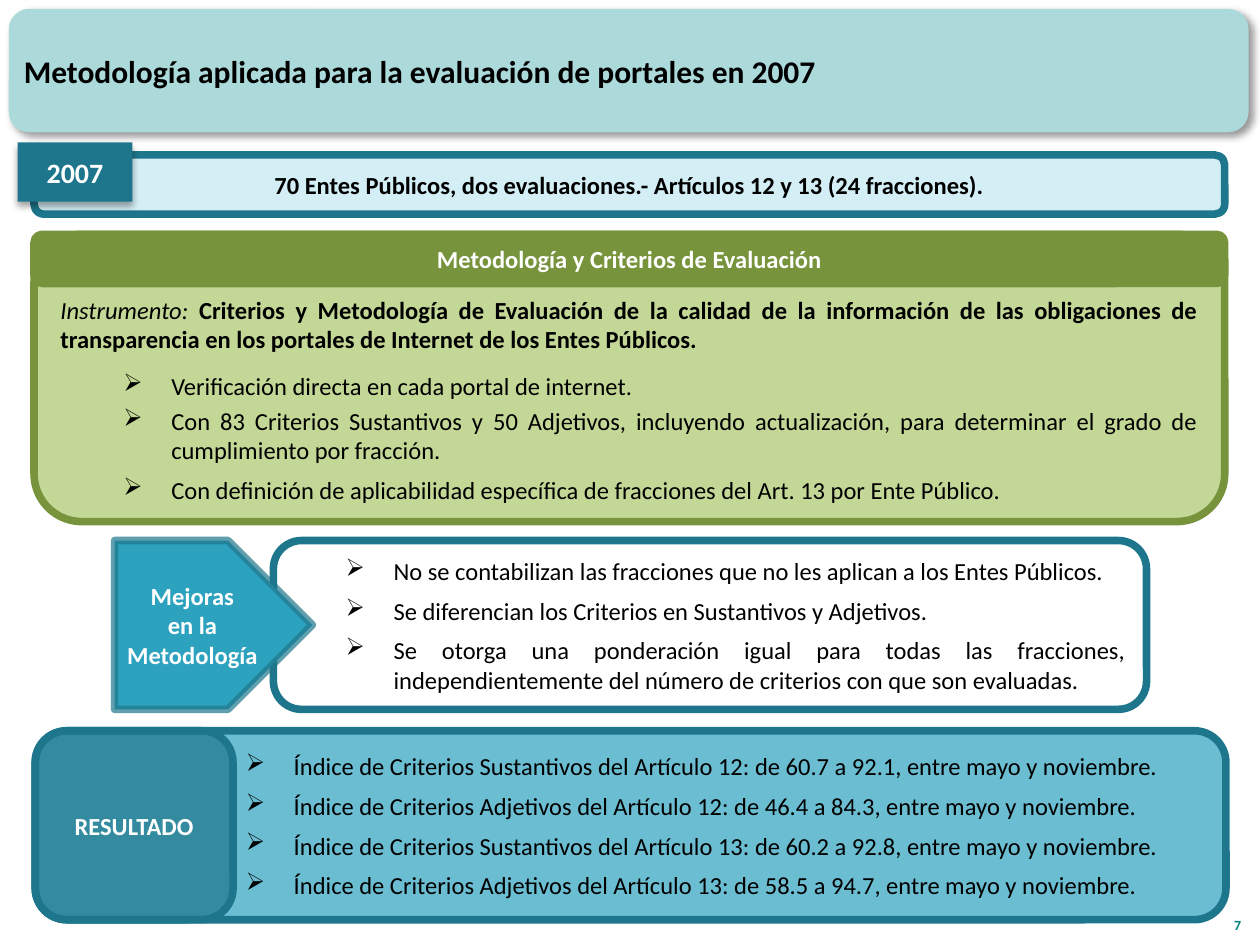
from pptx import Presentation
from pptx.dml.color import RGBColor
from pptx.enum.shapes import MSO_SHAPE as SHAPE
from pptx.enum.text import MSO_ANCHOR as ANCHOR, PP_ALIGN as ALIGN
from pptx.oxml.ns import qn
from pptx.util import Inches, Pt
from lxml.etree import SubElement

# Content
TITLE = "Metodología aplicada para la evaluación de portales en 2007"
YEAR = "2007"
SCOPE = "70 Entes Públicos, dos evaluaciones.- Artículos 12 y 13 (24 fracciones)."
METHOD = "Metodología y Criterios de Evaluación"
INSTRUMENT = [
    ("Instrumento: ", {"italic": True}),
    ("Criterios y Metodología de Evaluación de la calidad de la información de las "
     "obligaciones de transparencia en los portales de Internet de los Entes Públicos.",
     {"bold": True}),
]
CRITERIA = [
    "Verificación directa en cada portal de internet.",
    "Con 83 Criterios Sustantivos y 50 Adjetivos, incluyendo actualización, "
    "para determinar el grado de cumplimiento por fracción.",
    "Con definición de aplicabilidad específica de fracciones del Art. 13 por Ente Público.",
]
IMPROVED = ["Mejoras", "en la Metodología"]
IMPROVEMENTS = [
    "No se contabilizan las fracciones que no les aplican a los Entes Públicos.",
    "Se diferencian los Criterios en Sustantivos y Adjetivos.",
    "Se otorga una ponderación igual para todas las fracciones, "
    "independientemente del número de criterios con que son evaluadas.",
]
RESULT = "RESULTADO"
INDICES = [
    ("Sustantivos", 12, "60.7 a 92.1"),
    ("Adjetivos", 12, "46.4 a 84.3"),
    ("Sustantivos", 13, "60.2 a 92.8"),
    ("Adjetivos", 13, "58.5 a 94.7"),
]
RESULTS = [f"Índice de Criterios {kind} del Artículo {art}: de {span}, entre mayo y noviembre."
           for kind, art, span in INDICES]
PAGE = "7"

THEME = {
    "font": "Calibri", "black": "000000", "white": "FFFFFF",
    "banner": "ACDADB", "teal": "1E768C", "cyan": "2DA2BF", "pale": "D3EEF5",
    "green": "77933C", "light_green": "C3D796", "page": "008080",
    "title": 18, "year": 16, "body": 14, "small": 8, "border": 4.33,
}

# Layout
LEFT, WIDTH = 0.27, 9.45
METHOD_TOP, IMPROVE_TOP, RESULT_TOP = 1.86, 4.29, 5.8
IMPROVE_H, RESULT_H, LABEL_W = 1.34, 1.5, 1.57

prs = Presentation()
prs.slide_width, prs.slide_height = Inches(10), Inches(7.5)
slide = prs.slides.add_slide(prs.slide_layouts[6])


def rgb(name):
    return RGBColor.from_string(THEME[name])


def set_alpha(sppr, percent):
    """Make the solid colour inside a fill or line element translucent."""
    clr = sppr.find(qn("a:solidFill"))[0]
    SubElement(clr, qn("a:alpha"), val=str(percent * 1000))


def add_shadow(sp, percent, angle):
    effects = sp._element.spPr.find(qn("a:effectLst"))
    shadow = SubElement(effects, qn("a:outerShdw"), blurRad=str(Pt(4)), dist=str(Pt(3)),
                        dir=str(angle * 60000), algn="ctr", rotWithShape="0")
    clr = SubElement(shadow, qn("a:srgbClr"), val=THEME["black"])
    SubElement(clr, qn("a:alpha"), val=str(percent * 1000))


def add_box(kind, at, fill=None, line=None, fill_alpha=None, line_alpha=None):
    sp = slide.shapes.add_shape(kind, *map(Inches, at))
    sp.shadow.inherit = False
    if fill:
        sp.fill.solid()
        sp.fill.fore_color.rgb = rgb(fill)
    else:
        sp.fill.background()
    if line:
        sp.line.color.rgb = rgb(line)
        sp.line.width = Pt(THEME["border"])
    else:
        sp.line.fill.background()
    if fill_alpha:
        set_alpha(sp._element.spPr, fill_alpha)
    if line_alpha:
        set_alpha(sp._element.spPr.find(qn("a:ln")), line_alpha)
    return sp


def add_label(at):
    return slide.shapes.add_textbox(*map(Inches, at))


def write(sp, paras, align=ALIGN.CENTER, anchor=ANCHOR.MIDDLE, size="body",
          color="black", bold=False, indent=None, gaps=None):
    """Fill a shape; a paragraph is a string or a list of (text, format) runs.

    indent is (left, hanging) and bullets every string; gaps are points before each.
    """
    tf = sp.text_frame
    tf.word_wrap = True
    tf.vertical_anchor = anchor
    for i, para in enumerate(paras):
        p = tf.paragraphs[0] if i == 0 else tf.add_paragraph()
        if indent and isinstance(para, str):
            ppr = p._p.get_or_add_pPr()
            ppr.set("marL", str(Inches(indent[0])))
            ppr.set("indent", str(-Inches(indent[1])))
            SubElement(ppr, qn("a:buChar"), char="➢")
        p.alignment = align
        if gaps and i:
            p.space_before = Pt(gaps[i])
        for text, extra in [(para, {})] if isinstance(para, str) else para:
            r = p.add_run()
            r.text = text
            r.font.color.rgb = rgb(color)
            style = {"name": THEME["font"], "size": Pt(THEME[size]), "bold": bold}
            for name, value in (style | extra).items():
                setattr(r.font, name, value)
    return tf


# Title banner
banner = add_box(SHAPE.ROUNDED_RECTANGLE, (0.07, 0.07, 9.84, 0.98), "banner")
add_shadow(banner, 40, 45)
write(add_label((0.09, 0.09, 9.21, 0.94)), [TITLE], ALIGN.LEFT, size="title", bold=True)

# Scope and year tag
scope = add_box(SHAPE.ROUNDED_RECTANGLE, (LEFT, 1.23, WIDTH, 0.47), "pale", "teal")
write(scope, [SCOPE], bold=True)
year = add_box(SHAPE.RECTANGLE, (0.14, 1.13, 0.91, 0.47), "teal")
add_shadow(year, 35, 90)
write(year, [YEAR], size="year", color="white", bold=True)

# Methodology panel under its heading
panel = add_box(SHAPE.ROUNDED_RECTANGLE, (LEFT, METHOD_TOP, WIDTH, 2.28),
                "light_green", "green")
tf = write(panel, [INSTRUMENT, *CRITERIA], ALIGN.JUSTIFY, ANCHOR.TOP,
           indent=(0.88, 0.38), gaps=(0, 9.8, 3, 6))
tf.margin_top = Inches(0.37)
heading = add_box(SHAPE.ROUNDED_RECTANGLE, (LEFT, METHOD_TOP, WIDTH, 0.39), "green", "green")
write(heading, [METHOD], color="white", bold=True)

# Improvements and their arrow label
improve = add_box(SHAPE.ROUNDED_RECTANGLE, (2.17, IMPROVE_TOP, 6.93, IMPROVE_H), line="teal")
write(improve, IMPROVEMENTS, ALIGN.JUSTIFY, indent=(0.79, 0.38), gaps=[6] * 3)
arrow = add_box(SHAPE.PENTAGON, (0.91, IMPROVE_TOP, LABEL_W, IMPROVE_H), "cyan", "teal",
                line_alpha=70)
tf = write(arrow, IMPROVED, color="white", bold=True)
tf.margin_left = tf.margin_right = Inches(0.05)

# Results and their label
result = add_box(SHAPE.ROUNDED_RECTANGLE, (0.28, RESULT_TOP, WIDTH, RESULT_H), "cyan", "teal",
                 fill_alpha=70)
write(result, RESULTS, ALIGN.JUSTIFY, indent=(1.88, 0.38), gaps=[6] * 4)
tag = add_box(SHAPE.ROUNDED_RECTANGLE, (0.28, RESULT_TOP, LABEL_W, RESULT_H), "teal", "teal",
              fill_alpha=70)
write(tag, [RESULT], color="white", bold=True)

# Page number
write(add_label((9.55, 7.06, 0.4, 0.4)), [PAGE], ALIGN.RIGHT, ANCHOR.BOTTOM,
      size="small", color="page", bold=True)

prs.save("out.pptx")
